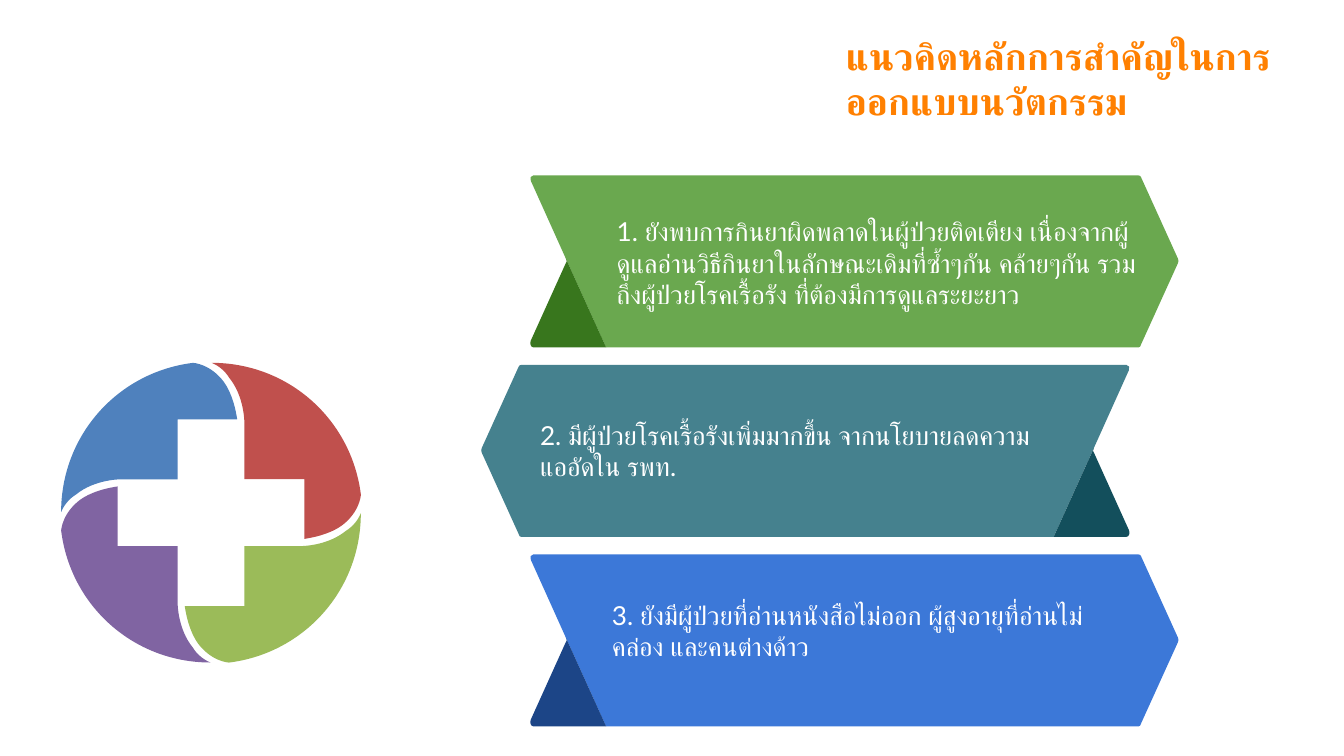
import pptx
import pptx.dml.color
import pptx.enum.text
import pptx.util
from lxml import etree

CELL = pptx.util.Inches(0.1)
COLUMNS, ROWS = 100, 56.25
FONT = "Lato"
DRAWING = "{http://schemas.openxmlformats.org/drawingml/2006/main}"

RIBBON_BODY = [
    [(93.8, 100)],
    [(94, 100), (94.2, 99.4), (94.2, 98.4)],
    [(99.9, 51)],
    [(100, 50.5), (100, 49), (99.9, 48.4)],
    [(94.2, 1)],
    [(94.2, 0.5), (94, 0), (93.8, 0)],
    [(0.6, 0)],
    [(0.2, 0), (0, 1.6), (0.2, 3.1)],
    [(5.6, 48.4)],
    [(11.8, 100)],
]
RIBBON_FOLD = [
    [(5.6, 51)],
    [(0.2, 96.1)],
    [(0, 97.7), (0.2, 100), (0.6, 100)],
    [(11.8, 100)],
    [(5.6, 48.4)],
    [(5.8, 49.2), (5.8, 50.8), (5.6, 51)],
]
PETAL = [
    [(87.4, 8.5)],
    [(99.1, -0.4), (100, -11.2), (100, -12.1)],
    [(93.7, -62.3), (51.6, -100), (0.4, -100)],
    [(4.9, -98.2), (9.4, -94.6), (12.1, -90.1)],
    [(22.3, -77.6), (22.3, -60.5), (22.3, -59.6)],
    [(22.3, -22.3)],
    [(62.3, -22.3)],
    [(62.3, 17.5)],
    [(67.7, 16.6), (78.5, 14.8), (87.4, 8.5)],
]
PETAL_TURNS = [("C0504D", 0), ("4F81BD", 3), ("8064A2", 2), ("9BBB59", 1)]

REASONS = [
    {
        "wording": "1. ยังพบการกินยาผิดพลาดในผู้ป่วยติดเตียง เนื่องจากผู้ดูแลอ่านวิธีกินยาในลักษณะเดิมที่ซ้ำๆกัน คล้ายๆกัน รวมถึงผู้ป่วยโรคเรื้อรัง ที่ต้องมีการดูแลระยะยาว",
        "body": "6AA84F", "fold": "38761D", "inset": (5.5, 2.5, 41.1, 8.1),
    },
    {
        "wording": "2. มีผู้ป่วยโรคเรื้อรังเพิ่มมากขึ้น จากนโยบายลดความแออัดใน รพท.",
        "body": "45818E", "fold": "134F5C", "inset": (3.4, 3.55, 40.7, 5.7),
    },
    {
        "wording": "3. ยังมีผู้ป่วยที่อ่านหนังสือไม่ออก ผู้สูงอายุที่อ่านไม่คล่อง และคนต่างด้าว",
        "body": "3C78D8", "fold": "1C4587", "inset": (5.15, 2.85, 40.7, 5.7),
    },
]


def color(hex_code):
    return pptx.dml.color.RGBColor.from_string(hex_code)


def cells(*lengths):
    return [round(length * CELL) for length in lengths]


def bend_corners(outline, segments):
    lines = list(outline._element.iter(f"{DRAWING}lnTo"))
    for segment in segments[1:]:
        controls, lines = lines[:len(segment)], lines[len(segment):]
        if len(controls) == 3:
            curve = etree.Element(f"{DRAWING}cubicBezTo")
            controls[0].addprevious(curve)
            for control in controls:
                curve.append(control[0])
                control.getparent().remove(control)


def add_outline(slide, segments, place, fill):
    points = [tuple(cells(*place(*point))) for segment in segments for point in segment]
    builder = slide.shapes.build_freeform(*points[0], scale=1.0)
    builder.add_line_segments(points[1:], close=False)
    outline = builder.convert_to_shape()
    bend_corners(outline, segments)
    for trace in outline._element.iter(f"{DRAWING}path"):
        etree.SubElement(trace, f"{DRAWING}close")
    outline.shadow.inherit = False
    outline.fill.solid()
    outline.fill.fore_color.rgb = color(fill)
    outline.line.fill.background()


def add_text(slide, box, text, size=14, hex_code="FFFFFF", bold=False,
             anchor=pptx.enum.text.MSO_ANCHOR.TOP,
             fit=pptx.enum.text.MSO_AUTO_SIZE.SHAPE_TO_FIT_TEXT):
    frame = slide.shapes.add_textbox(*cells(*box)).text_frame
    frame.word_wrap = True
    frame.auto_size = fit
    frame.vertical_anchor = anchor
    frame.text = text
    for paragraph in frame.paragraphs:
        for run in paragraph.runs:
            run.font.size = pptx.util.Pt(size)
            run.font.bold = bold
            run.font.name = FONT
            run.font.color.rgb = color(hex_code)
            for script in ("ea", "cs"):
                etree.SubElement(run.font._element, f"{DRAWING}{script}", typeface=FONT)


def add_ribbon(slide, box, reason, mirrored):
    left, top, width, height = box

    def place(x, y):
        across = 100 - x if mirrored else x
        return left + across * width / 100, top + y * height / 100

    add_outline(slide, RIBBON_BODY, place, reason["body"])
    add_outline(slide, RIBBON_FOLD, place, reason["fold"])


def add_reasons(slide, box):
    left, top, width, height = box
    gap, shift = 1.3, 3.6
    ribbon_height = (height - gap * (len(REASONS) - 1)) / len(REASONS)
    corners = []
    for index, reason in enumerate(REASONS):
        mirrored = index % 2 == 1
        ribbon_left = left if mirrored else left + shift
        ribbon_top = top + index * (ribbon_height + gap)
        corners.append((ribbon_left, ribbon_top))
        add_ribbon(slide, (ribbon_left, ribbon_top, width - shift, ribbon_height),
                   reason, mirrored)
    for reason, (ribbon_left, ribbon_top) in reversed(list(zip(REASONS, corners))):
        inset_left, inset_top, text_width, text_height = reason["inset"]
        add_text(slide, (ribbon_left + inset_left, ribbon_top + inset_top,
                         text_width, text_height), reason["wording"])


def add_cross_wheel(slide, box):
    left, top, width, height = box

    def place(x, y):
        return left + width * (100 + x) / 200, top + height * (100 + y) / 200

    for fill, quarter_turns in PETAL_TURNS:
        petal = PETAL
        for _ in range(quarter_turns):
            petal = [[(-y, x) for x, y in segment] for segment in petal]
        add_outline(slide, petal, place, fill)


def add_heading(slide, box):
    add_text(slide, box, "แนวคิดหลักการสำคัญในการ\nออกแบบนวัตกรรม", size=20,
             hex_code="FF8001", bold=True, anchor=pptx.enum.text.MSO_ANCHOR.MIDDLE,
             fit=pptx.enum.text.MSO_AUTO_SIZE.NONE)


def main():
    presentation = pptx.Presentation()
    presentation.slide_width, presentation.slide_height = cells(COLUMNS, ROWS)
    slide = presentation.slides.add_slide(presentation.slide_layouts[6])
    add_reasons(slide, (35.8, 13.05, 51.9, 41))
    add_heading(slide, (61.95, 2.05, 35.9, 7.5))
    add_cross_wheel(slide, (4.55, 27, 22.3, 22.3))
    presentation.save("out.pptx")


if __name__ == "__main__":
    main()
